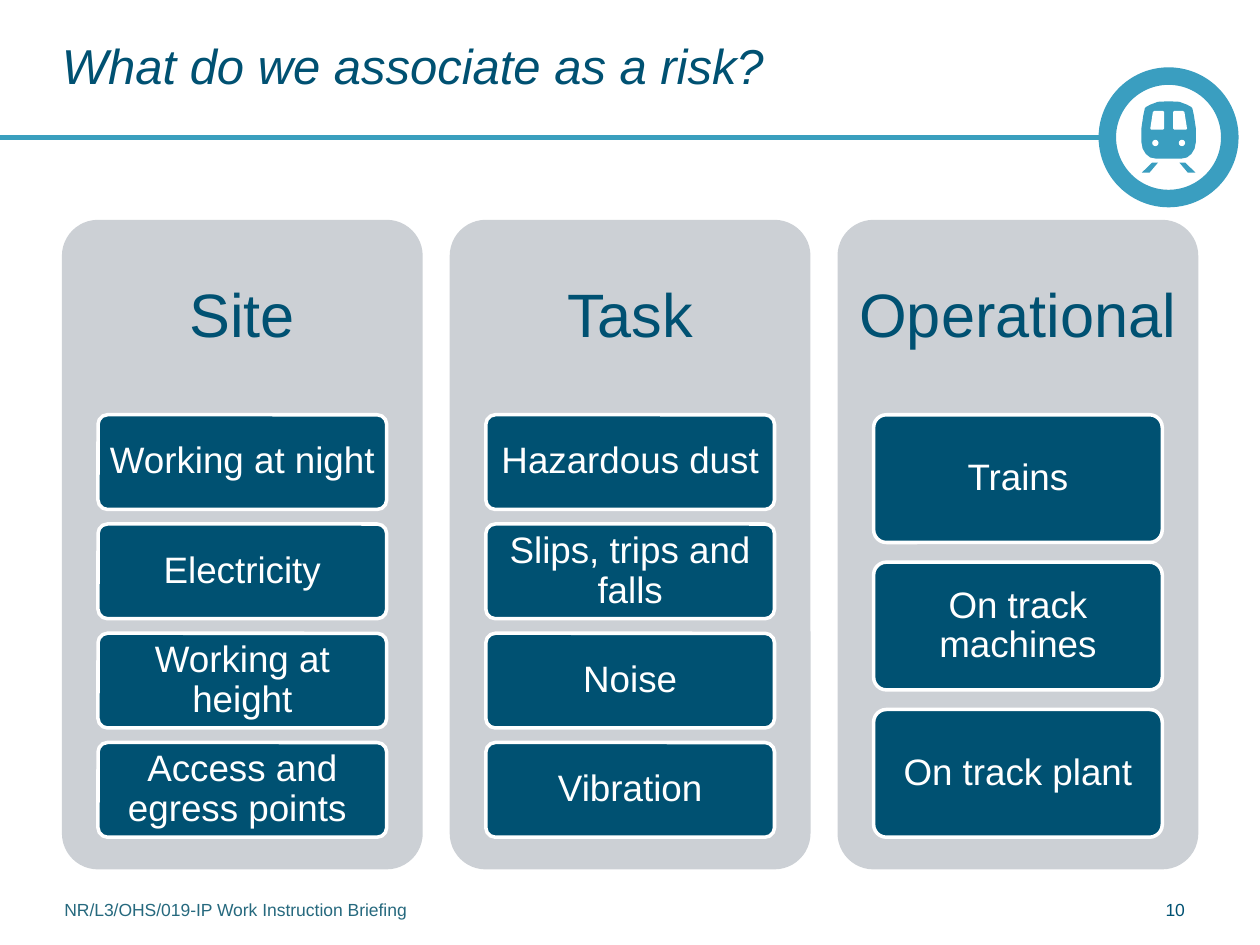
from dataclasses import dataclass

from lxml import etree
from pptx import Presentation
from pptx.dml.color import RGBColor
from pptx.enum.shapes import MSO_CONNECTOR, MSO_SHAPE
from pptx.enum.text import MSO_ANCHOR, MSO_AUTO_SIZE, PP_ALIGN
from pptx.oxml.ns import qn
from pptx.util import Pt

STRAIGHT = MSO_CONNECTOR.STRAIGHT
ROUNDED = MSO_SHAPE.ROUNDED_RECTANGLE
DONUT = MSO_SHAPE.DONUT
OVAL = MSO_SHAPE.OVAL
TOP, MIDDLE = MSO_ANCHOR.TOP, MSO_ANCHOR.MIDDLE
LEFT, CENTER = PP_ALIGN.LEFT, PP_ALIGN.CENTER
NO_AUTOFIT = MSO_AUTO_SIZE.NONE


@dataclass(frozen=True)
class Theme:
    font: str = "Arial"
    navy: str = "005172"
    sky: str = "3A9EC0"
    rule: str = "3A9FBE"
    panel: str = "CCD0D5"
    white: str = "FFFFFF"
    footer: str = "26697E"
    title_size: float = 28
    heading_size: float = 35
    item_size: float = 21
    footer_size: float = 10


class SlideBuilder:
    def __init__(self, slide, theme):
        self.slide = slide
        self.theme = theme

    def set_text(self, frame, text, size, color, align=LEFT, anchor=TOP,
                 margins=(0, 0, 0, 0), spacing=1.0, italic=False):
        frame.word_wrap = True
        frame.auto_size = NO_AUTOFIT
        frame.vertical_anchor = anchor
        (frame.margin_left, frame.margin_top,
         frame.margin_right, frame.margin_bottom) = map(Pt, margins)
        paragraph = frame.paragraphs[0]
        paragraph.alignment = align
        paragraph.line_spacing = spacing
        run = paragraph.add_run()
        run.text = text
        run.font.name = self.theme.font
        run.font.size = Pt(size)
        run.font.italic = italic
        run.font.color.rgb = RGBColor.from_string(color)

    def paint(self, shape, fill, border=None):
        shape.shadow.inherit = False
        shape.fill.solid()
        shape.fill.fore_color.rgb = RGBColor.from_string(fill)
        if border:
            shape.line.color.rgb = RGBColor.from_string(border)
            shape.line.width = Pt(2)
        else:
            shape.line.fill.background()
        return shape

    def title(self, text, *box):
        title = self.slide.shapes.title
        title.left, title.top, title.width, title.height = map(Pt, box)
        self.set_text(title.text_frame, text, self.theme.title_size,
                      self.theme.navy, anchor=MIDDLE, spacing=0.85, italic=True)

    def label(self, text, color, *box):
        label = self.slide.shapes.add_textbox(*map(Pt, box))
        self.set_text(label.text_frame, text, self.theme.footer_size, color)

    def preset(self, kind, fill, *box, adjust=None, border=None):
        shape = self.slide.shapes.add_shape(kind, *map(Pt, box))
        if adjust is not None:
            shape.adjustments[0] = adjust
        return self.paint(shape, fill, border)

    def outline(self, points, fill):
        start, *rest = [(Pt(x), Pt(y)) for x, y in points]
        builder = self.slide.shapes.build_freeform(*start, scale=1.0)
        builder.add_line_segments(rest, close=True)
        return self.paint(builder.convert_to_shape(), fill)

    def rule(self, x1, y1, x2, y2):
        rule = self.slide.shapes.add_connector(STRAIGHT, *map(Pt, (x1, y1, x2, y2)))
        rule.line.color.rgb = RGBColor.from_string(self.theme.rule)
        rule.line.width = Pt(3)
        etree.SubElement(rule._element.spPr, qn("a:effectLst"))

    def train_badge(self, center_x, center_y, radius):
        sky, white = self.theme.sky, self.theme.white
        self.preset(DONUT, sky, center_x - radius, center_y - radius,
                    2 * radius, 2 * radius, adjust=0.125)

        def place(points, side=1):
            return [(center_x + side * dx, center_y + dy) for dx, dy in points]

        half_body = [(0, -20.6), (6.1, -20.3), (10.4, -18.7), (13, -17.3),
                     (13.6, -16.5), (14.5, -12.3), (15.5, -5.5), (15.5, 3),
                     (14.8, 6.5), (13, 9.5), (10.5, 11.5), (7.5, 12.1)]
        window = [(2.6, -14.6), (3.2, -15.1), (8.2, -15.1), (9, -14.5),
                  (10.5, -5), (10, -4.4), (3.2, -4.4), (2.6, -5)]
        rail = [(6.1, 14.4), (9.4, 14.4), (15.3, 20.1), (10.9, 20.1)]
        lamp_x, lamp_y, lamp_radius = 7.6, 3.2, 1.8

        self.outline(place(half_body) + place(half_body[:0:-1], -1), sky)
        for side in (-1, 1):
            self.outline(place(window, side), white)
            self.outline(place(rail, side), sky)
            self.preset(OVAL, white, center_x + side * lamp_x - lamp_radius,
                        center_y + lamp_y - lamp_radius,
                        2 * lamp_radius, 2 * lamp_radius)

    def risk_panel(self, heading, left, top, width, height):
        panel = self.preset(ROUNDED, self.theme.panel, left, top, width, height,
                            adjust=0.1)
        self.set_text(panel.text_frame, heading, self.theme.heading_size,
                      self.theme.navy, CENTER, MIDDLE, (4.8, 4.8, 4.8, 264), 0.9)

    def risk_item(self, text, *box):
        item = self.preset(ROUNDED, self.theme.navy, *box, adjust=0.1,
                           border=self.theme.white)
        self.set_text(item.text_frame, text, self.theme.item_size,
                      self.theme.white, CENTER, MIDDLE, (4.2, 3.4, 4.2, 3.4), 0.9)


RISKS = {
    "Site": ["Working at night", "Electricity", "Working at height",
             "Access and egress points "],
    "Task": ["Hazardous dust", "Slips, trips and falls", "Noise", "Vibration"],
    "Operational": ["Trains", "On track machines", "On track plant"],
}
PANEL_LEFT, PANEL_TOP, PANEL_WIDTH, PANEL_HEIGHT = 35.4, 125.6, 206.2, 371.2
PANEL_PITCH = 221.6
ITEM_INSET = PANEL_WIDTH / 10
ITEMS_TOP, ITEMS_HEIGHT = 237, 241.4
GAP_RATIO = 2 / 13


def main():
    presentation = Presentation()
    presentation.slide_width = Pt(720)
    presentation.slide_height = Pt(540)
    slide = presentation.slides.add_slide(presentation.slide_layouts[5])
    theme = Theme()
    builder = SlideBuilder(slide, theme)

    builder.rule(0, 78.5, 632, 78.5)
    builder.train_badge(667.8, 78.5, 40)
    builder.title("What do we associate as a risk?", 35.4, 14.4, 570, 50.4)

    for column, (heading, risks) in enumerate(RISKS.items()):
        left = PANEL_LEFT + column * PANEL_PITCH
        builder.risk_panel(heading, left, PANEL_TOP, PANEL_WIDTH, PANEL_HEIGHT)
        item_height = ITEMS_HEIGHT / (len(risks) + (len(risks) - 1) * GAP_RATIO)
        for row, risk in enumerate(risks):
            builder.risk_item(risk, left + ITEM_INSET,
                              ITEMS_TOP + row * item_height * (1 + GAP_RATIO),
                              PANEL_WIDTH - 2 * ITEM_INSET, item_height)

    builder.label("NR/L3/OHS/019-IP Work Instruction Briefing", theme.footer,
                  36.8, 514, 623, 17.3)
    builder.label("10", theme.navy, 666, 514, 35.3, 17.3)
    presentation.save("out.pptx")


if __name__ == "__main__":
    main()
